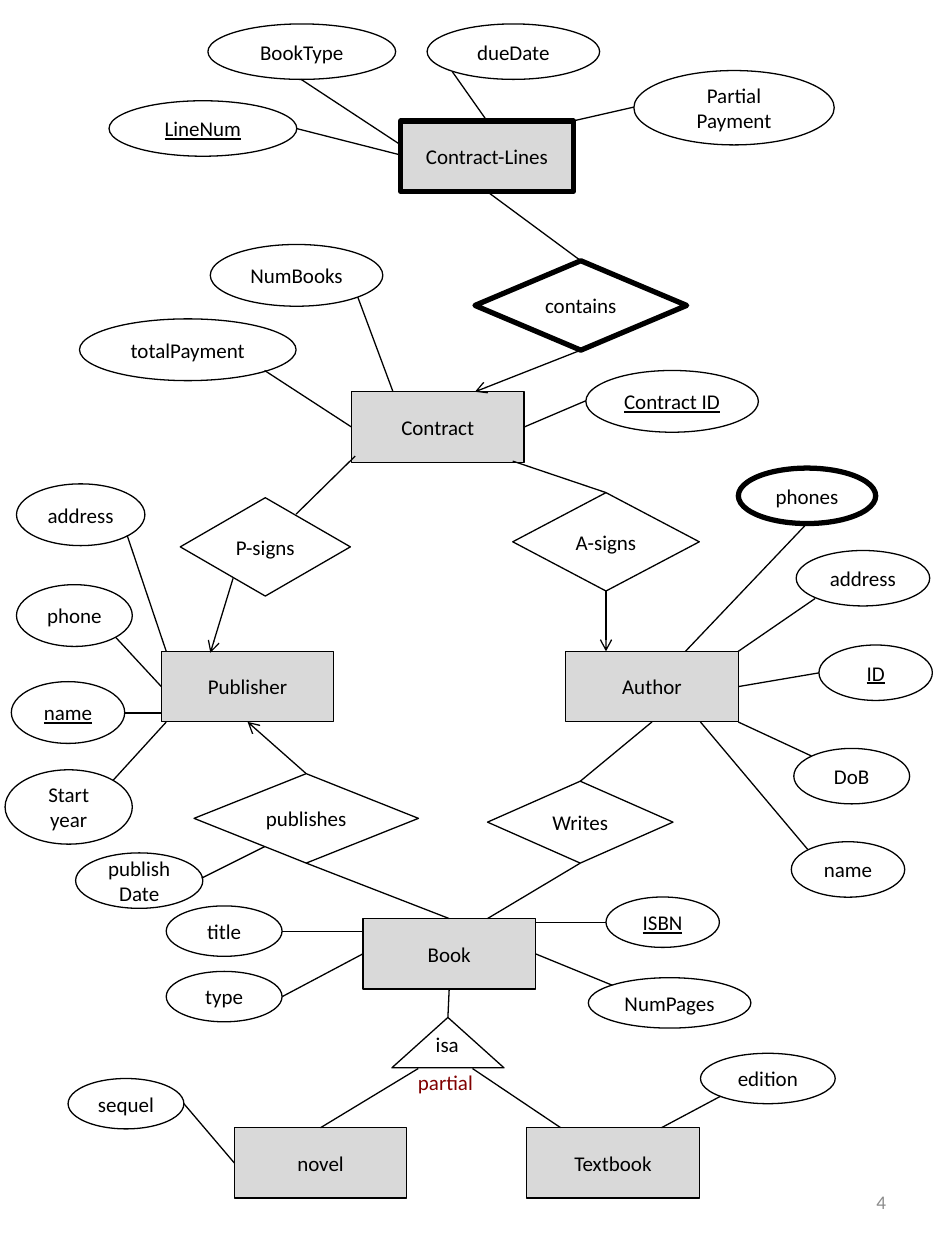
from dataclasses import dataclass
from typing import Union

from pptx import Presentation
from pptx.dml.color import RGBColor
from pptx.enum.shapes import MSO_CONNECTOR as Line, MSO_SHAPE as Kind
from pptx.enum.text import MSO_ANCHOR as Anchor, PP_ALIGN as Align
from pptx.oxml.ns import qn
from pptx.util import Pt
from lxml.etree import SubElement

BLACK = RGBColor(0x00, 0x00, 0x00)
GREY = RGBColor(0xD9, 0xD9, 0xD9)
NUMBER_GREY = RGBColor(0x8C, 0x8C, 0x8C)
MAROON = RGBColor(0x80, 0x00, 0x00)
FONT = "Calibri"
THIN, THICK = 0.75, 3
TOP, LEFT, BOTTOM, RIGHT = range(4)

Spot = tuple[Union[str, float], float]


@dataclass
class Node:
    text: str
    left: float
    top: float
    width: float = 98.6
    height: float = 40.3
    kind: Kind = Kind.RECTANGLE
    weight: float = THIN
    underline: bool = False
    key: str = ""


@dataclass
class Link:
    start: Spot
    end: Spot
    arrow: bool = False


def attribute(text: str, left: float, top: float, width: float, height: float, **extra) -> Node:
    return Node(text, left, top, width, height, Kind.OVAL, **extra)


def relation(text: str, left: float, top: float, width: float, height: float, **extra) -> Node:
    return Node(text, left, top, width, height, Kind.DIAMOND, **extra)


ENTITIES = [
    Node("Publisher", 92.2, 372.2),
    Node("Author", 323.3, 372.2),
    Node("Book", 207.4, 524.9),
    Node("Contract", 200.9, 223.9),
    Node("Contract-Lines", 229, 69.1, weight=THICK),
    Node("novel", 133.9, 644.4),
    Node("Textbook", 301, 644.4),
]
RELATIONS = [
    relation("Writes", 278.6, 446.4, 106, 46.8),
    relation("publishes", 110.9, 442.1, 128.2, 51.1),
    relation("A-signs", 293, 281.5, 106.6, 56.2),
    relation("P-signs", 103, 284.4, 97.2, 56.2),
    relation("contains", 271.4, 149, 121, 51.1, weight=THICK),
    Node("", 223.9, 581.4, 64.1, 28.8, Kind.ISOSCELES_TRIANGLE, key="isa"),
]
ATTRIBUTES = [
    attribute("ID", 468, 368.6, 64.8, 31.7, underline=True),
    attribute("phones", 421.9, 267.5, 78.5, 31.7, weight=THICK),
    attribute("DoB", 453.6, 427.7, 66.2, 31.7),
    attribute("address", 455, 314.6, 76.3, 31.7),
    attribute("name", 452.2, 481, 64.8, 31.7),
    attribute("Start\vyear", 2.9, 439.9, 72.7, 42.5),
    attribute("phone", 9.4, 334.1, 66.2, 35.3),
    attribute("address", 9.4, 276.5, 73.4, 35.3),
    attribute("name", 6.5, 389.5, 64.8, 35.3, underline=True),
    attribute("ISBN", 346.3, 512.6, 64.8, 28.8, underline=True),
    attribute("title", 95, 517.7, 66.2, 28.8),
    attribute("NumPages", 336.2, 558.7, 92.9, 28.8),
    attribute("type", 95, 555.1, 66.2, 28.8),
    attribute("totalPayment", 45.4, 182.2, 123.8, 35.3),
    attribute("NumBooks", 120.2, 139.7, 98.6, 35.3),
    attribute("BookType", 118.8, 13.7, 107.3, 31.7),
    attribute("dueDate", 244.1, 13.7, 98.6, 31.7),
    attribute("Partial\nPayment", 362.2, 40.3, 114.5, 42.5),
    attribute("LineNum", 62.3, 57.6, 107.3, 31.7, underline=True),
    attribute("publish\vDate", 43.2, 487.4, 72.7, 31.7),
    attribute("sequel", 38.9, 616.3, 66.2, 28.8),
    attribute("edition", 400.3, 601.9, 77, 28.8),
    attribute("Contract ID", 334.8, 211.7, 98.6, 35.3, underline=True),
]
LINKS = [
    Link((204.5, 169.9), (224.6, 223.9)),
    Link((151.2, 211.7), ("Contract", LEFT)),
    Link((334.8, 229), ("Contract", RIGHT)),
    Link((72.7, 306), (95, 372.2)),
    Link(("contains", BOTTOM), (271.4, 223.9), arrow=True),
    Link((172.1, 45.4), (229, 82.8)),
    Link((169.2, 73.4), (229, 88.6)),
    Link((362.2, 61.2), (327.6, 69.1)),
    Link((258.5, 41), ("Contract-Lines", TOP)),
    Link(("Contract-Lines", BOTTOM), ("contains", TOP)),
    Link((468, 384.5), ("Author", RIGHT)),
    Link((465.8, 342), (421.9, 372.2)),
    Link((460.8, 299.5), (391.7, 372.2)),
    Link((463.7, 432), (421.9, 412.6)),
    Link((461.5, 485.3), (400.3, 412.6)),
    Link((95, 412.6), (64.8, 445.7)),
    Link((71.3, 407.5), (92.2, 407.5)),
    Link((66.2, 364.3), ("Publisher", LEFT)),
    Link((161.3, 569.5), ("Book", LEFT)),
    Link((161.3, 532.1), (207.4, 532.1)),
    Link((349.9, 563), ("Book", RIGHT)),
    Link((346.3, 527), (306, 527)),
    Link((133.2, 330.5), (120.2, 373), arrow=True),
    Link((203, 260.6), (169.2, 293.8)),
    Link(("Writes", BOTTOM), (278.6, 524.9)),
    Link(("Author", BOTTOM), ("Writes", TOP)),
    Link(("publishes", BOTTOM), ("Book", TOP)),
    Link(("publishes", TOP), ("Publisher", BOTTOM), arrow=True),
    Link(("A-signs", BOTTOM), (346.3, 372.2), arrow=True),
    Link((293, 263.5), ("A-signs", TOP)),
    Link((115.2, 501.8), (151.2, 483.8)),
    Link((105.1, 630.7), ("novel", LEFT)),
    Link((411.8, 626.4), (378, 644.4)),
    Link(("Book", BOTTOM), ("isa", TOP)),
    Link(("novel", TOP), (239, 610.6)),
    Link((320.4, 644.4), (270, 610.6)),
]


def write(box, text: str, *, size: float = 12, color: RGBColor = BLACK, align=Align.CENTER,
          anchor=Anchor.MIDDLE, underline: bool = False, wrap: bool = False) -> None:
    frame = box.text_frame
    frame.text = text
    frame.word_wrap = wrap
    frame.vertical_anchor = anchor
    for para in frame.paragraphs:
        para.alignment = align
        for span in para.runs:
            span.font.name = FONT
            span.font.size = Pt(size)
            span.font.color.rgb = color
            if underline:
                span.font.underline = True


def draw_node(page, node: Node):
    shape = page.shapes.add_shape(node.kind, Pt(node.left), Pt(node.top),
                                  Pt(node.width), Pt(node.height))
    shape.shadow.inherit = False
    if node.kind == Kind.RECTANGLE:
        shape.fill.solid()
        shape.fill.fore_color.rgb = GREY
    else:
        shape.fill.background()
    shape.line.color.rgb = BLACK
    shape.line.width = Pt(node.weight)
    if node.text:
        write(shape, node.text, underline=node.underline)
    return shape


def draw_link(page, link: Link, shapes: dict) -> None:
    start, end = ((0, 0) if isinstance(spot[0], str) else spot for spot in (link.start, link.end))
    connector = page.shapes.add_connector(Line.STRAIGHT, *(Pt(value) for value in (*start, *end)))
    for spot, join in ((link.start, connector.begin_connect), (link.end, connector.end_connect)):
        if isinstance(spot[0], str):
            join(shapes[spot[0]], spot[1])
    connector.line.color.rgb = BLACK
    connector.line.width = Pt(THIN)
    if link.arrow:
        SubElement(connector.line._get_or_add_ln(), qn("a:tailEnd"), type="arrow")
    SubElement(connector._element.spPr, qn("a:effectLst"))


def draw_label(page, text: str, left: float, top: float, width: float, height: float, **style) -> None:
    box = page.shapes.add_textbox(Pt(left), Pt(top), Pt(width), Pt(height))
    write(box, text, **style)


def main() -> None:
    deck = Presentation()
    deck.slide_width, deck.slide_height = Pt(540), Pt(720)
    page = deck.slides.add_slide(deck.slide_layouts[6])
    shapes = {node.key or node.text: draw_node(page, node) for node in ENTITIES + RELATIONS}
    for node in ATTRIBUTES:
        draw_node(page, node)
    for link in LINKS:
        draw_link(page, link, shapes)
    draw_label(page, "isa", 241.9, 586.1, 28.1, 21.6, align=Align.LEFT, anchor=Anchor.TOP)
    draw_label(page, "partial", 231.8, 607.7, 46.1, 21.6, color=MAROON,
               align=Align.LEFT, anchor=Anchor.TOP)
    draw_label(page, "4", 387.4, 667.4, 126, 38.2, size=11, color=NUMBER_GREY,
               align=Align.RIGHT, wrap=True)
    deck.save("out.pptx")


if __name__ == "__main__":
    main()
